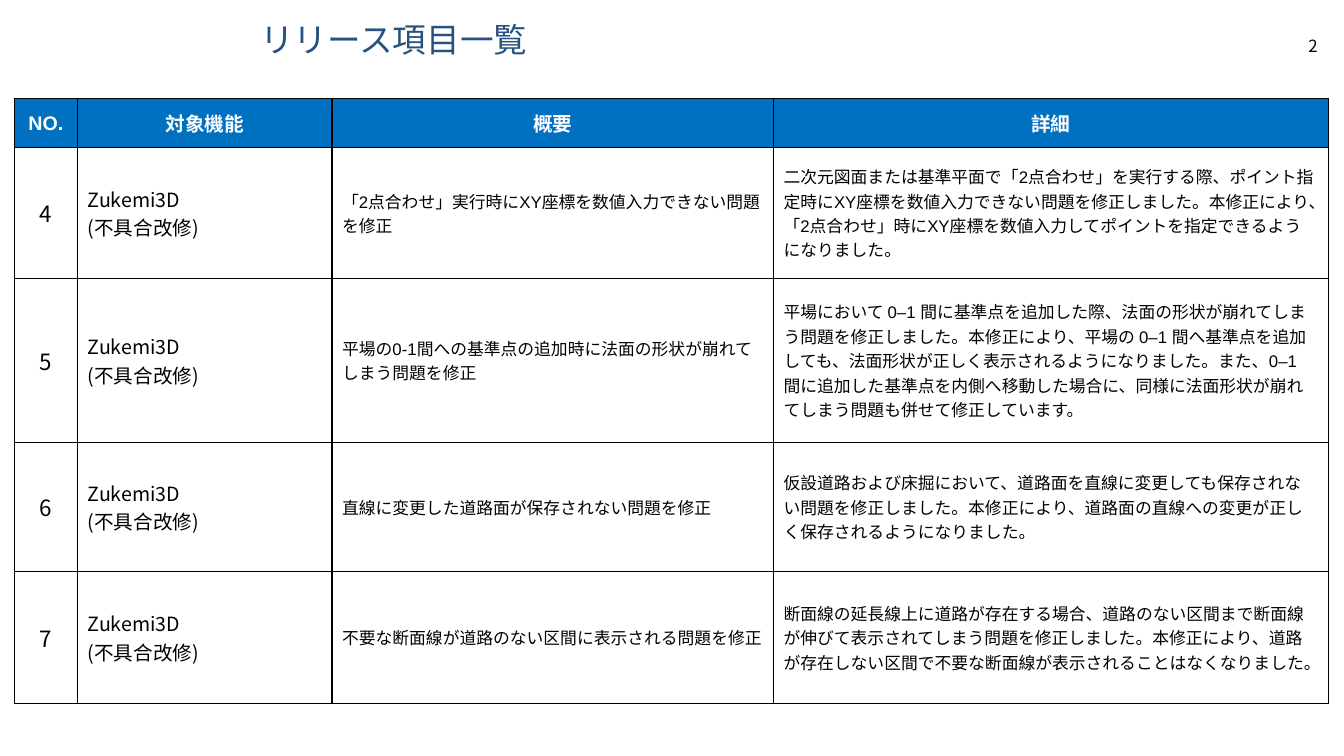
import dataclasses

import pptx
import pptx.dml.color
import pptx.enum.text
import pptx.oxml
import pptx.oxml.ns
import pptx.util

Pt = pptx.util.Pt
ALIGN = pptx.enum.text.PP_ALIGN
MIDDLE = pptx.enum.text.MSO_ANCHOR.MIDDLE

COLORS = {"title": "265180", "header": "0070C0", "white": "FFFFFF", "black": "000000"}
LATIN, JAPANESE = "Arial", "Noto Sans CJK JP"
COLUMN_WIDTHS = (45.4, 181.7, 315.4, 396.2)
HEADER_HEIGHT = 34.8
HEADINGS = ("NO.", "対象機能", "概要", "詳細")


@dataclasses.dataclass(frozen=True)
class Style:
    size: float
    font: str
    color: str = "black"
    bold: bool = False
    align: int = ALIGN.LEFT


@dataclasses.dataclass(frozen=True)
class Release:
    number: int
    summary: str
    detail: str
    height: float


TITLE = Style(24, LATIN, "title")
PAGE_NUMBER = Style(12, JAPANESE, align=ALIGN.RIGHT)
HEADING = Style(14, LATIN, "white", True, ALIGN.CENTER)
COLUMN_STYLES = (
    Style(16, JAPANESE, align=ALIGN.CENTER),
    Style(14, JAPANESE),
    Style(12, LATIN),
    Style(12, LATIN),
)
FEATURE = ("Zukemi3D", "(不具合改修)")

RELEASES = (
    Release(
        4,
        "「2点合わせ」実行時にXY座標を数値入力できない問題を修正",
        "二次元図面または基準平面で「2点合わせ」を実行する際、ポイント指定時にXY座標を"
        "数値入力できない問題を修正しました。本修正により、「2点合わせ」時にXY座標を"
        "数値入力してポイントを指定できるようになりました。",
        93.6,
    ),
    Release(
        5,
        "平場の0-1間への基準点の追加時に法面の形状が崩れてしまう問題を修正",
        "平場において 0–1 間に基準点を追加した際、法面の形状が崩れてしまう問題を修正しました。"
        "本修正により、平場の 0–1 間へ基準点を追加しても、法面形状が正しく表示されるように"
        "なりました。また、0–1 間に追加した基準点を内側へ移動した場合に、同様に法面形状が"
        "崩れてしまう問題も併せて修正しています。",
        116.9,
    ),
    Release(
        6,
        "直線に変更した道路面が保存されない問題を修正",
        "仮設道路および床掘において、道路面を直線に変更しても保存されない問題を修正しました。"
        "本修正により、道路面の直線への変更が正しく保存されるようになりました。",
        92.3,
    ),
    Release(
        7,
        "不要な断面線が道路のない区間に表示される問題を修正",
        "断面線の延長線上に道路が存在する場合、道路のない区間まで断面線が伸びて表示されて"
        "しまう問題を修正しました。本修正により、道路が存在しない区間で不要な断面線が"
        "表示されることはなくなりました。",
        94.3,
    ),
)


def rgb(name: str) -> pptx.dml.color.RGBColor:
    return pptx.dml.color.RGBColor.from_string(COLORS[name])


def write(tf, lines: tuple[str, ...], style: Style) -> None:
    for i, line in enumerate(lines):
        p = tf.add_paragraph() if i else tf.paragraphs[0]
        p.alignment = style.align
        p.space_before = Pt(0)
        r = p.add_run()
        r.text = line
        r.font.size = Pt(style.size)
        r.font.bold = style.bold
        r.font.color.rgb = rgb(style.color)
        r.font.name = style.font
        # East Asian typeface
        ea = pptx.oxml.parse_xml(
            f'<a:ea {pptx.oxml.ns.nsdecls("a")} typeface="{JAPANESE}"/>'
        )
        r.font._element.append(ea)


def fill_cell(cell, lines: tuple[str, ...], style: Style, fill: str) -> None:
    cell.vertical_anchor = MIDDLE
    write(cell.text_frame, lines, style)
    # Borders precede the fill in the cell properties
    for side in ("lnL", "lnR", "lnT", "lnB"):
        border = pptx.oxml.parse_xml(
            f'<a:{side} {pptx.oxml.ns.nsdecls("a")} w="{Pt(1)}"><a:solidFill>'
            f'<a:srgbClr val="{COLORS["black"]}"/></a:solidFill></a:{side}>'
        )
        cell._tc.get_or_add_tcPr().append(border)
    cell.fill.solid()
    cell.fill.fore_color.rgb = rgb(fill)


def add_title(s) -> None:
    sp = s.shapes.title
    sp.left, sp.top, sp.width, sp.height = Pt(178.6), Pt(14.4), Pt(642.2), Pt(30.2)
    tf = sp.text_frame
    tf.auto_size = pptx.enum.text.MSO_AUTO_SIZE.NONE
    tf.vertical_anchor = MIDDLE
    write(tf, ("リリース項目一覧",), TITLE)
    tf.paragraphs[0].line_spacing = 0.9


def add_page_number(s) -> None:
    sp = s.shapes.add_textbox(Pt(898.6), Pt(21.6), Pt(49.7), Pt(21.6))
    tf = sp.text_frame
    tf.word_wrap = True
    tf.margin_top = tf.margin_bottom = Pt(0)
    tf.vertical_anchor = MIDDLE
    write(tf, ("2",), PAGE_NUMBER)


def add_release_table(s) -> None:
    heights = (HEADER_HEIGHT, *(release.height for release in RELEASES))
    table = s.shapes.add_table(
        len(heights), len(COLUMN_WIDTHS),
        Pt(10.1), Pt(70.6), Pt(sum(COLUMN_WIDTHS)), Pt(sum(heights)),
    ).table
    for column, width in zip(table.columns, COLUMN_WIDTHS):
        column.width = Pt(width)
    for row, height in zip(table.rows, heights):
        row.height = Pt(height)

    # Header row
    for i, heading in enumerate(HEADINGS):
        fill_cell(table.cell(0, i), (heading,), HEADING, "header")

    # One row per release item
    for row, release in enumerate(RELEASES, start=1):
        texts = ((str(release.number),), FEATURE, (release.summary,), (release.detail,))
        for i, (lines, style) in enumerate(zip(texts, COLUMN_STYLES)):
            fill_cell(table.cell(row, i), lines, style, "white")


def main() -> None:
    prs = pptx.Presentation()
    prs.slide_width, prs.slide_height = Pt(960), Pt(540)
    s = prs.slides.add_slide(prs.slide_layouts.get_by_name("Title Only"))
    add_title(s)
    add_page_number(s)
    add_release_table(s)
    prs.save("out.pptx")


if __name__ == "__main__":
    main()
